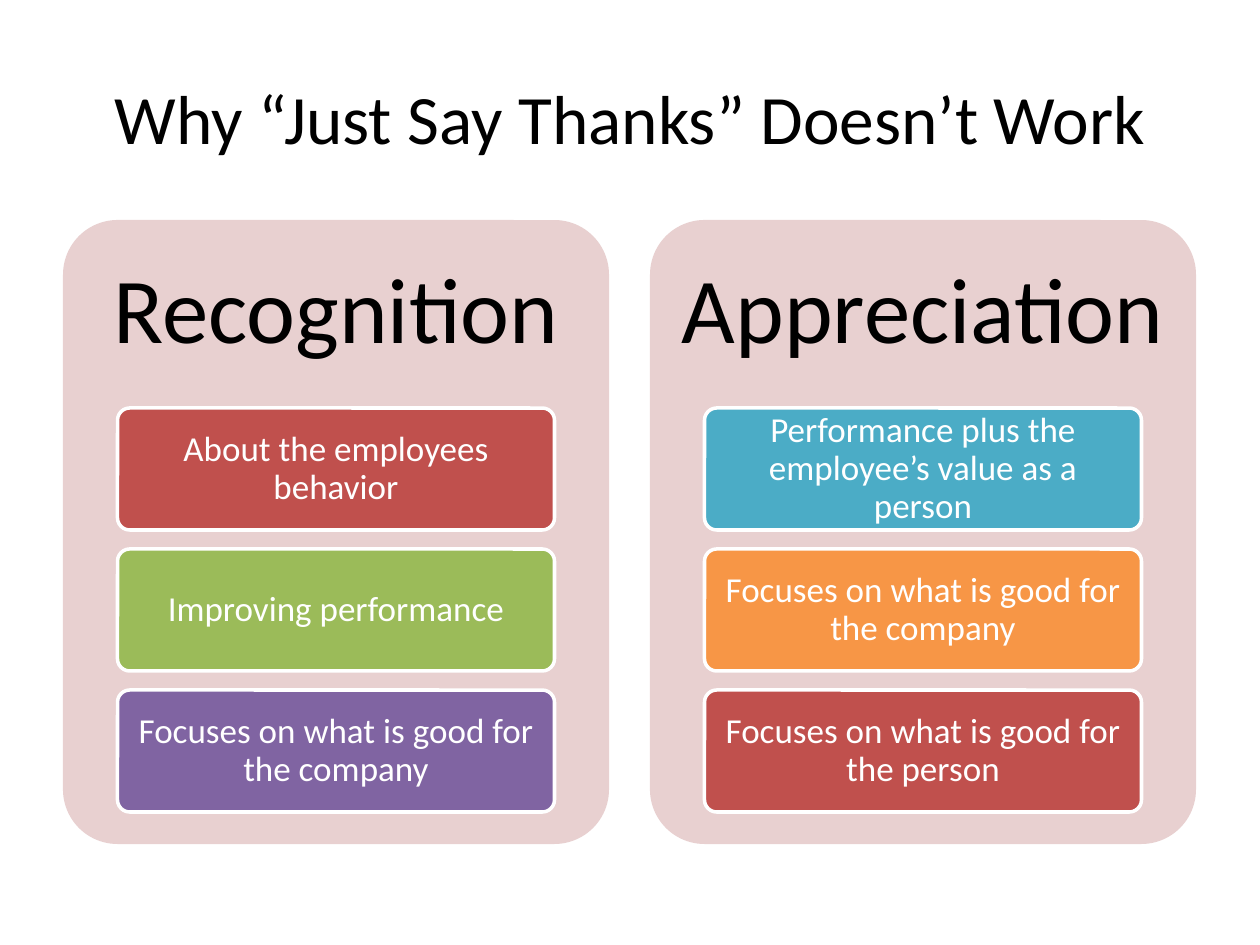
from pptx import Presentation
from pptx.dml.color import RGBColor
from pptx.enum.shapes import MSO_SHAPE as Shape
from pptx.enum.text import MSO_ANCHOR as Anchor, PP_ALIGN as Align
from pptx.util import Pt

TITLE = "Why “Just Say Thanks” Doesn’t Work"
COLUMNS = [
    ("Recognition", [
        ("About the employees behavior", "C0504D"),
        ("Improving performance", "9BBB59"),
        ("Focuses on what is good for the company", "8064A2"),
    ]),
    ("Appreciation", [
        ("Performance plus the employee’s value as a person", "4BACC6"),
        ("Focuses on what is good for the company", "F79646"),
        ("Focuses on what is good for the person", "C0504D"),
    ]),
]

EMU_PER_PX = 914400 / 126
SLIDE_SIZE = (1260, 945)
TITLE_AREA = (63, 38, 1134, 157)
PANEL_LEFT, PANEL_TOP, PANEL_WIDTH, PANEL_HEIGHT = 63, 220, 546, 624
PANEL_PITCH = 587
HEADING_HEIGHT = 187
CARD_WIDTH, CARD_HEIGHT, CARD_PITCH = 437, 122, 141
CARD_INDENT = (PANEL_WIDTH - CARD_WIDTH) / 2

HEADING_STYLE = {"size": 53, "color": "000000", "spacing": 0.9, "insets": (28, 28)}
CARD_STYLE = {"size": 20, "color": "FFFFFF", "spacing": 0.9, "insets": (8, 5)}
TITLE_STYLE = {"size": 39.6, "color": "000000", "spacing": 1.0, "insets": (13, 6)}


def px(value):
    return round(value * EMU_PER_PX)


def rgb(code):
    return RGBColor.from_string(code)


def set_values(target, values):
    for name, value in values.items():
        setattr(target, name, value)


def write(box, text, style):
    frame = box.text_frame
    across, down = (px(inset) for inset in style["insets"])
    set_values(frame, {
        "word_wrap": True, "vertical_anchor": Anchor.MIDDLE,
        "margin_left": across, "margin_right": across,
        "margin_top": down, "margin_bottom": down,
    })
    para = frame.paragraphs[0]
    set_values(para, {"alignment": Align.CENTER, "line_spacing": style["spacing"]})
    span = para.add_run()
    span.text = text
    set_values(span.font, {"name": "Calibri", "size": Pt(style["size"])})
    span.font.color.rgb = rgb(style["color"])


def add_rounded(shapes, area, fill, outline=None):
    box = shapes.add_shape(Shape.ROUNDED_RECTANGLE, *map(px, area))
    box.adjustments[0] = 0.1
    box.shadow.inherit = False
    box.fill.solid()
    box.fill.fore_color.rgb = rgb(fill)
    if outline:
        box.line.color.rgb = rgb(outline)
        box.line.width = Pt(2)
    else:
        box.line.fill.background()
    return box


def add_column(shapes, left, heading, cards):
    add_rounded(shapes, (left, PANEL_TOP, PANEL_WIDTH, PANEL_HEIGHT), "E8D0D0")
    heading_area = (left, PANEL_TOP, PANEL_WIDTH, HEADING_HEIGHT)
    write(shapes.add_textbox(*map(px, heading_area)), heading, HEADING_STYLE)
    for row, (text, fill) in enumerate(cards):
        top = PANEL_TOP + HEADING_HEIGHT + 1 + row * CARD_PITCH
        area = (left + CARD_INDENT, top, CARD_WIDTH, CARD_HEIGHT)
        write(add_rounded(shapes, area, fill, "FFFFFF"), text, CARD_STYLE)


def main():
    deck = Presentation()
    deck.slide_width, deck.slide_height = map(px, SLIDE_SIZE)
    page = deck.slides.add_slide(deck.slide_layouts[5])
    title = page.shapes.title
    set_values(title, dict(zip(("left", "top", "width", "height"), map(px, TITLE_AREA))))
    write(title, TITLE, TITLE_STYLE)
    group = page.shapes.add_group_shape()
    for index, (heading, cards) in enumerate(COLUMNS):
        add_column(group.shapes, PANEL_LEFT + index * PANEL_PITCH, heading, cards)
    deck.save("out.pptx")


if __name__ == "__main__":
    main()
